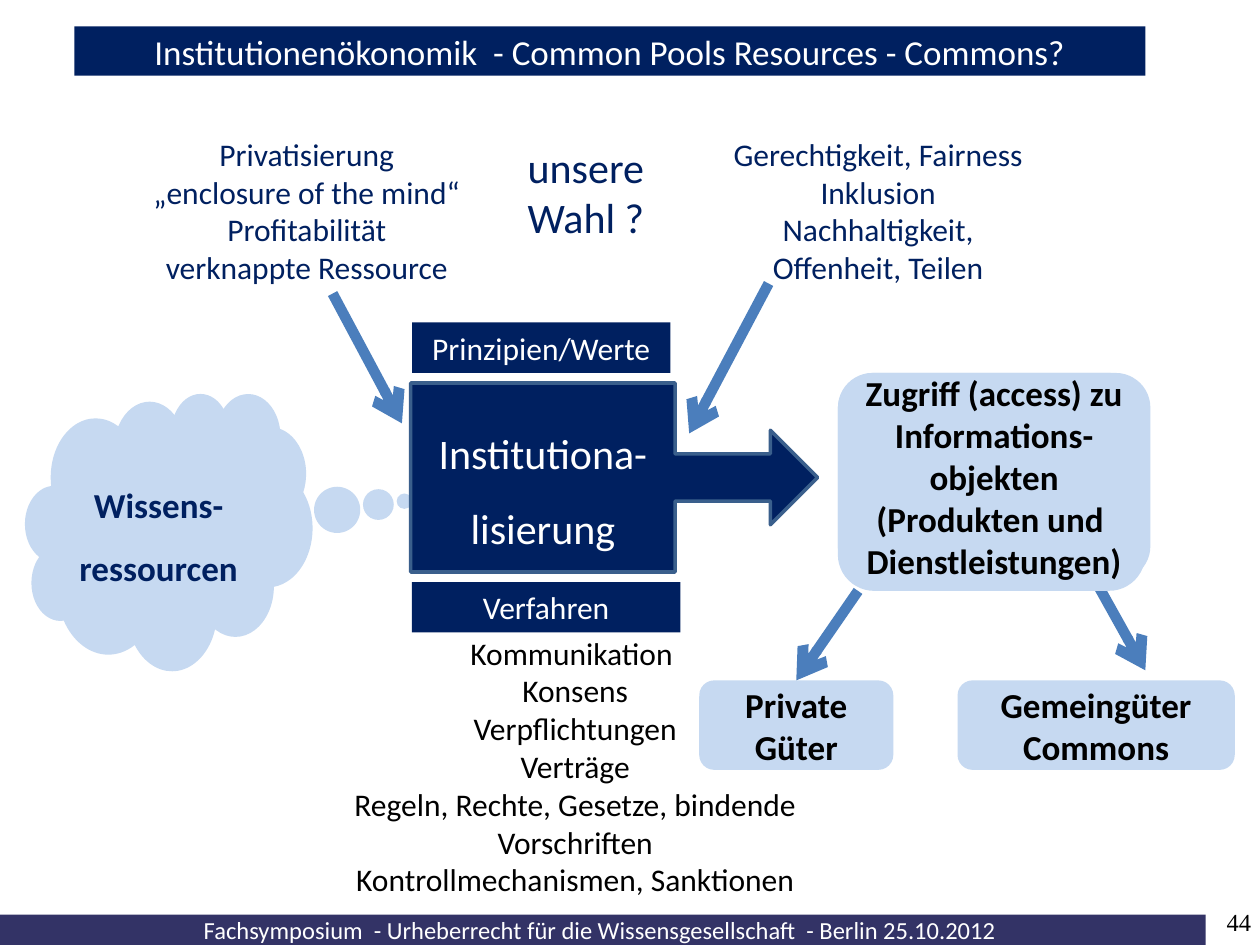
from dataclasses import dataclass

from lxml.etree import SubElement
from pptx import Presentation
from pptx.dml.color import RGBColor
from pptx.enum.shapes import MSO_CONNECTOR, MSO_SHAPE
from pptx.enum.text import MSO_ANCHOR, MSO_AUTO_SIZE, PP_ALIGN
from pptx.oxml.ns import qn
from pptx.util import Inches, Pt


@dataclass(frozen=True)
class Theme:
    navy: RGBColor = RGBColor(0x00, 0x20, 0x60)
    pale: RGBColor = RGBColor(0xC6, 0xD9, 0xF1)
    footer: RGBColor = RGBColor(0x33, 0x33, 0x66)
    arrow: RGBColor = RGBColor(0x4B, 0x7E, 0xBC)
    outline: RGBColor = RGBColor(0x3A, 0x5F, 0x8C)
    white: RGBColor = RGBColor(0xFF, 0xFF, 0xFF)
    black: RGBColor = RGBColor(0x00, 0x00, 0x00)
    font: str = "Calibri"
    number_font: str = "Times New Roman"
    small: int = 14
    body: int = 18
    strong: int = 20
    large: int = 24


theme = Theme()


def write(box, *lines, size=theme.body, color=theme.black, bold=False, font=theme.font,
          align=PP_ALIGN.CENTER, anchor=MSO_ANCHOR.TOP, spacing=None, inset=True):
    """Fill a box with one paragraph per line, all in the same format."""
    frame = box.text_frame
    frame.word_wrap = True
    frame.auto_size = MSO_AUTO_SIZE.NONE
    frame.vertical_anchor = anchor
    if not inset:
        frame.margin_left = frame.margin_right = frame.margin_top = frame.margin_bottom = 0
    for index, line in enumerate(lines):
        para = frame.add_paragraph() if index else frame.paragraphs[0]
        para.text = line
        para.alignment = align
        para.line_spacing = spacing
        for span in para.runs:
            span.font.name = font
            span.font.size = Pt(size)
            span.font.bold = bold
            span.font.color.rgb = color


def add_box(kind, left, top, width, height, fill):
    """Add a flat preset shape without outline."""
    box = page.shapes.add_shape(kind, Inches(left), Inches(top), Inches(width), Inches(height))
    box.shadow.inherit = False
    box.fill.solid()
    box.fill.fore_color.rgb = fill
    box.line.fill.background()
    return box


deck = Presentation()
deck.slide_width = Inches(10)
deck.slide_height = Inches(7.5)
page = deck.slides.add_slide(deck.slide_layouts[5])

# Title bar
title = page.shapes.title
title.left, title.top = Inches(0.59), Inches(0.21)
title.width, title.height = Inches(8.5), Inches(0.39)
title.fill.solid()
title.fill.fore_color.rgb = theme.navy
write(title, "Institutionenökonomik  - Common Pools Resources - Commons?",
      size=theme.strong, color=theme.white, anchor=MSO_ANCHOR.MIDDLE)

# Footer and page number
footer = add_box(MSO_SHAPE.RECTANGLE, 0, 7.26, 9.57, 0.24, theme.footer)
write(footer, "Fachsymposium  - Urheberrecht für die Wissensgesellschaft  - Berlin 25.10.2012 ",
      size=theme.small, color=theme.white, inset=False)
number = page.shapes.add_textbox(Inches(9.25), Inches(7.2), Inches(0.68), Inches(0.3))
write(number, "44", size=theme.small, font=theme.number_font, align=PP_ALIGN.RIGHT, inset=False)

# Knowledge cloud
cloud = add_box(MSO_SHAPE.CLOUD_CALLOUT, 0.2, 3.12, 2.28, 2.2, theme.pale)
cloud.adjustments[0], cloud.adjustments[1] = 0.82, -0.11
write(cloud, "Wissens-ressourcen", size=theme.strong, color=theme.navy, bold=True,
      anchor=MSO_ANCHOR.MIDDLE, spacing=1.5)

# Labels above and below the institution
for label, top, width in (("Prinzipien/Werte", 2.56, 2.05), ("Verfahren", 4.62, 2.13)):
    write(add_box(MSO_SHAPE.RECTANGLE, 3.27, top, width, 0.4, theme.navy), label,
          color=theme.white)

# Free texts: values, choice and procedures
texts = (
    (0.98, 1.02, 2.91, 1.31, theme.body, theme.navy,
     ("Privatisierung", "„enclosure of the mind“", "Profitabilität", "verknappte Ressource")),
    (5.63, 1.02, 2.68, 1.31, theme.body, theme.navy,
     ("Gerechtigkeit, Fairness", "Inklusion", "Nachhaltigkeit, Offenheit, Teilen")),
    (3.98, 1.07, 1.34, 0.91, theme.large, theme.navy, ("unsere Wahl ?",)),
    (2.24, 4.98, 4.65, 2.22, theme.body, theme.black,
     ("Kommunikation ", "Konsens", "Verpflichtungen", "Verträge",
      "Regeln, Rechte, Gesetze, bindende Vorschriften", "Kontrollmechanismen, Sanktionen")),
)
for left, top, width, height, size, color, lines in texts:
    area = page.shapes.add_textbox(Inches(left), Inches(top), Inches(width), Inches(height))
    write(area, *lines, size=size, color=color)

# Institution with its block arrow
institution = add_box(MSO_SHAPE.RIGHT_ARROW_CALLOUT, 3.26, 3.04, 3.23, 1.5, theme.navy)
institution.line.color.rgb = theme.outline
institution.line.width = Pt(2)
write(institution, "Institutiona-", "lisierung", size=theme.large, color=theme.white,
      anchor=MSO_ANCHOR.MIDDLE, spacing=1.5)

# Two kinds of goods
private = add_box(MSO_SHAPE.ROUNDED_RECTANGLE, 5.55, 5.4, 1.54, 0.71, theme.pale)
common = add_box(MSO_SHAPE.ROUNDED_RECTANGLE, 7.6, 5.4, 2.2, 0.71, theme.pale)
for goods, lines in ((private, ("Private Güter",)), (common, ("Gemeingüter", "Commons"))):
    write(goods, *lines, size=theme.strong, bold=True, anchor=MSO_ANCHOR.MIDDLE)

# Arrows: values to institution, access to goods
arrows = (
    (2.64, 2.33, 3.19, 3.36, None),
    (6.1, 2.25, 5.47, 3.44, None),
    (6.81, 4.69, 6.32, 5.4, private),
    (8.7, 4.62, 9.09, 5.32, None),
)
for start_x, start_y, end_x, end_y, target in arrows:
    arrow = page.shapes.add_connector(MSO_CONNECTOR.STRAIGHT, Inches(start_x), Inches(start_y),
                                      Inches(end_x), Inches(end_y))
    if target is not None:
        arrow.end_connect(target, 0)
    arrow.line.color.rgb = theme.arrow
    arrow.line.width = Pt(6)
    SubElement(arrow.line._get_or_add_ln(), qn("a:tailEnd"), type="arrow")
    SubElement(arrow._element.spPr, qn("a:effectLst"))

# Access box on its backing plate
add_box(MSO_SHAPE.ROUNDED_RECTANGLE, 6.65, 2.96, 2.44, 1.73, theme.pale)
access = add_box(MSO_SHAPE.ROUNDED_RECTANGLE, 6.65, 2.96, 2.48, 1.65, theme.pale)
write(access, "Zugriff (access) zu Informations-objekten (Produkten und \vDienstleistungen)",
      size=theme.strong, bold=True, anchor=MSO_ANCHOR.MIDDLE)

deck.save("out.pptx")
